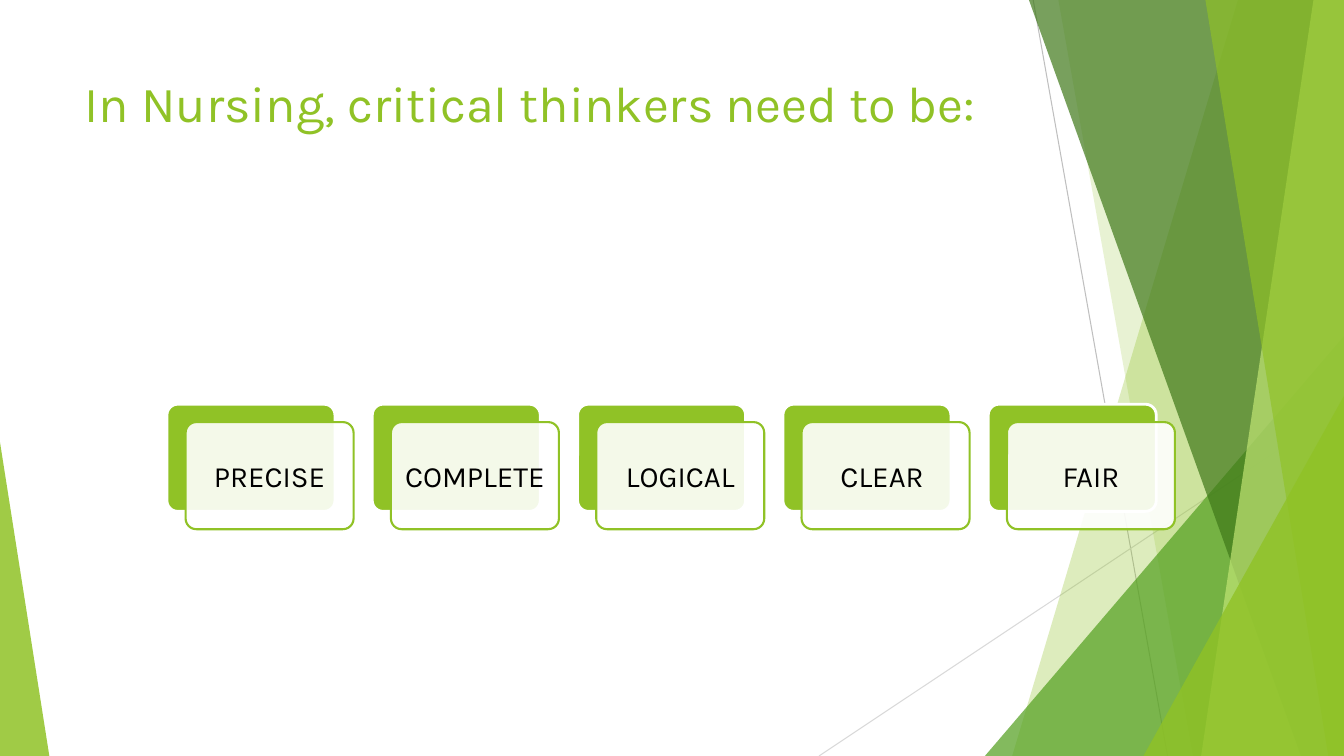
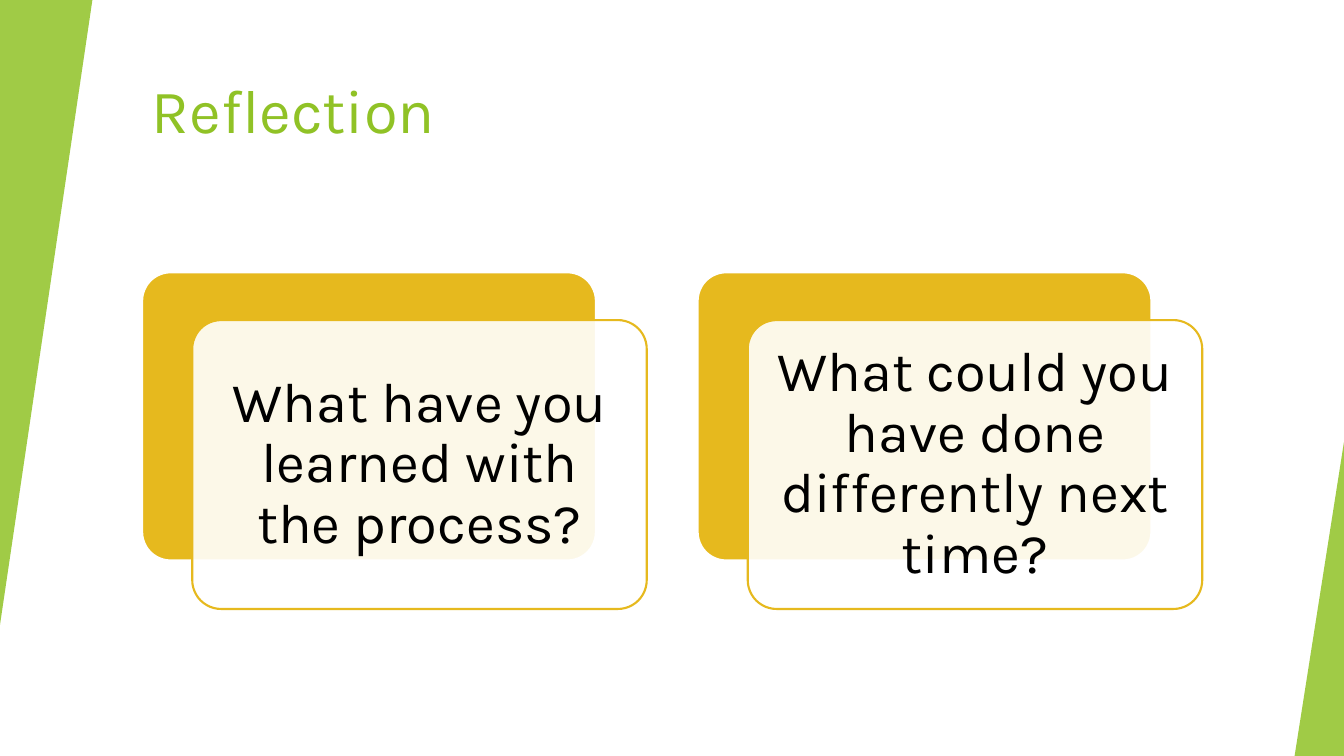
from dataclasses import dataclass

from lxml.etree import SubElement
from pptx import Presentation
from pptx.dml.color import RGBColor
from pptx.enum.shapes import MSO_CONNECTOR, MSO_SHAPE
from pptx.enum.text import MSO_ANCHOR, MSO_AUTO_SIZE, PP_ALIGN
from pptx.oxml.ns import qn
from pptx.util import Pt

SCALE = 9525  # EMU per px, 96 px to the inch
WIDE, HIGH = 1280, 720


@dataclass(frozen=True)
class Theme:
    font: str = "Karla"
    lime: str = "90C226"
    leaf: str = "54A021"
    moss: str = "3F7819"
    pale: str = "C0E474"
    gold: str = "E6B91E"
    white: str = "FFFFFF"
    ink: str = "000000"
    gray: str = "BFBFBF"
    mist: str = "D9D9D9"
    title: int = 36
    large: int = 44
    label: int = 21
    prompt: int = 40


THEME = Theme()


def px(*sizes):
    return [round(size * SCALE) for size in sizes]


def rgb(color):
    return RGBColor.from_string(color)


def write(shape, text, size, color=THEME.ink, align=PP_ALIGN.CENTER,
          anchor=MSO_ANCHOR.MIDDLE, inset=None, space=1.0):
    """Put one formatted paragraph in a shape; inset is px on all sides."""
    frame = shape.text_frame
    frame.text = text
    frame.word_wrap = True
    frame.auto_size = MSO_AUTO_SIZE.NONE
    frame.vertical_anchor = anchor
    if inset is not None:
        frame.margin_left, frame.margin_right = px(inset, inset)
        frame.margin_top, frame.margin_bottom = px(inset, inset)
    para = frame.paragraphs[0]
    para.alignment = align
    para.line_spacing = space
    font = para.runs[0].font
    font.name, font.size = THEME.font, Pt(size)
    font.color.rgb = rgb(color)


def paint(shape, color, alpha=100, edge=None, weight=1.5):
    """Fill and outline a shape; alpha is opacity in percent."""
    shape.shadow.inherit = False
    shape.fill.solid()
    shape.fill.fore_color.rgb = rgb(color)
    if alpha < 100:
        tint = shape.element.spPr.find(qn("a:solidFill"))[0]
        SubElement(tint, qn("a:alpha")).set("val", str(alpha * 1000))
    if edge:
        shape.line.color.rgb = rgb(edge)
        shape.line.width = Pt(weight)
    else:
        shape.line.fill.background()


def ray(slide, start, end, color):
    line = slide.shapes.add_connector(
        MSO_CONNECTOR.STRAIGHT, *px(*start, *end))
    line.line.color.rgb = rgb(color)
    line.line.width = Pt(0.75)
    SubElement(line.element.spPr, qn("a:effectLst"))


def pane(slide, top, foot, color, alpha):
    """Fill from a slanted left edge to the right side of the slide."""
    draft = slide.shapes.build_freeform(top, 0, scale=SCALE)
    draft.add_line_segments([(WIDE, 0), (WIDE, HIGH), (foot, HIGH)])
    paint(draft.convert_to_shape(), color, alpha)


def wedge(slide, box, tip, color=THEME.lime, alpha=85, turn=0):
    """Draw a triangle whose tip lies at a share of the box width."""
    shape = slide.shapes.add_shape(MSO_SHAPE.ISOSCELES_TRIANGLE, *px(*box))
    shape.adjustments[0] = tip
    shape.rotation = turn
    paint(shape, color, alpha)


def facets(slide):
    ray(slide, (984, 0), (1112, HIGH), THEME.gray)
    ray(slide, (WIDE, 387), (780, HIGH), THEME.mist)
    pane(slide, 1179, 964, THEME.lime, 30)
    pane(slide, 1008, 1136, THEME.lime, 20)
    wedge(slide, (938, 320, 342, 400), 1, THEME.leaf, 72)
    pane(slide, 980, 1239, THEME.moss, 70)
    pane(slide, 1251, 1144, THEME.pale, 70)
    pane(slide, 1148, 1265, THEME.lime, 65)
    wedge(slide, (1089, 377, 191, 343), 1, alpha=80)
    wedge(slide, (0, 421, 47, 299), 0)


def share(deck, slide):
    """Move the drawn shapes of a slide to the master, under fresh ids."""
    tree = deck.slide_master.shapes.element
    parts = [part for part in slide.shapes if not part.is_placeholder]
    for mark, part in enumerate(parts, start=100):
        part.element.find(".//" + qn("p:cNvPr")).set("id", str(mark))
        tree.append(part.element)


def sides(slide):
    """Cover the shared facets in white, with a wedge at either side."""
    cover = slide.shapes.add_shape(MSO_SHAPE.RECTANGLE, *px(0, 0, WIDE, HIGH))
    paint(cover, THEME.white)
    # The title has to stay in front of the cover.
    slide.shapes.title.element.addprevious(cover.element)
    wedge(slide, (0, 0, 88, 595), 1, turn=180)
    wedge(slide, (1233, 421, 47, 299), 1)


def plate(slide, box, *args, **style):
    shape = slide.shapes.add_shape(MSO_SHAPE.ROUNDED_RECTANGLE, *px(*box))
    shape.adjustments[0] = 0.1
    paint(shape, *args, **style)
    return shape


def cards(slide, box, labels, color, **style):
    """Share a box among layered cards; shift and gap are a ninth of a card."""
    left, top, width, height = box
    wide = 9 * width / (11 * len(labels) - 1)
    shift = wide / 9
    drop = height / 7
    high = height - drop
    for i, label in enumerate(labels):
        x = left + i * (wide + 2 * shift)
        plate(slide, (x, top, wide, high), color,
              edge=THEME.white, weight=2)
        front = plate(slide, (x + shift, top + drop, wide, high),
                      THEME.white, alpha=90, edge=color)
        write(front, label, **style)


def page(deck, text, box, size):
    slide = deck.slides.add_slide(deck.slide_layouts[5])
    title = slide.shapes.title
    title.left, title.top, title.width, title.height = px(*box)
    write(title, text, size, THEME.lime, PP_ALIGN.LEFT, MSO_ANCHOR.TOP)
    return slide


def traits(deck):
    slide = page(deck, "In Nursing, critical thinkers need to be:",
                 (71, 64, 902, 138), THEME.title)
    facets(slide)
    share(deck, slide)
    cards(slide, (159, 385, 960, 119),
          ["PRECISE", "COMPLETE", "LOGICAL", "CLEAR ", "FAIR"],
          THEME.lime, size=THEME.label, inset=9)


def review(deck):
    slide = page(deck, "Reflection", (135, 64, 1070, 115), THEME.large)
    sides(slide)
    cards(slide, (135, 259, 1010, 321),
          ["What have you learned with the process?",
           "What could you have done differently next time?"],
          THEME.gold, size=THEME.prompt, inset=16, space=0.9)


def main():
    deck = Presentation()
    deck.slide_width, deck.slide_height = px(WIDE, HIGH)
    traits(deck)
    review(deck)
    deck.save("out.pptx")


if __name__ == "__main__":
    main()
